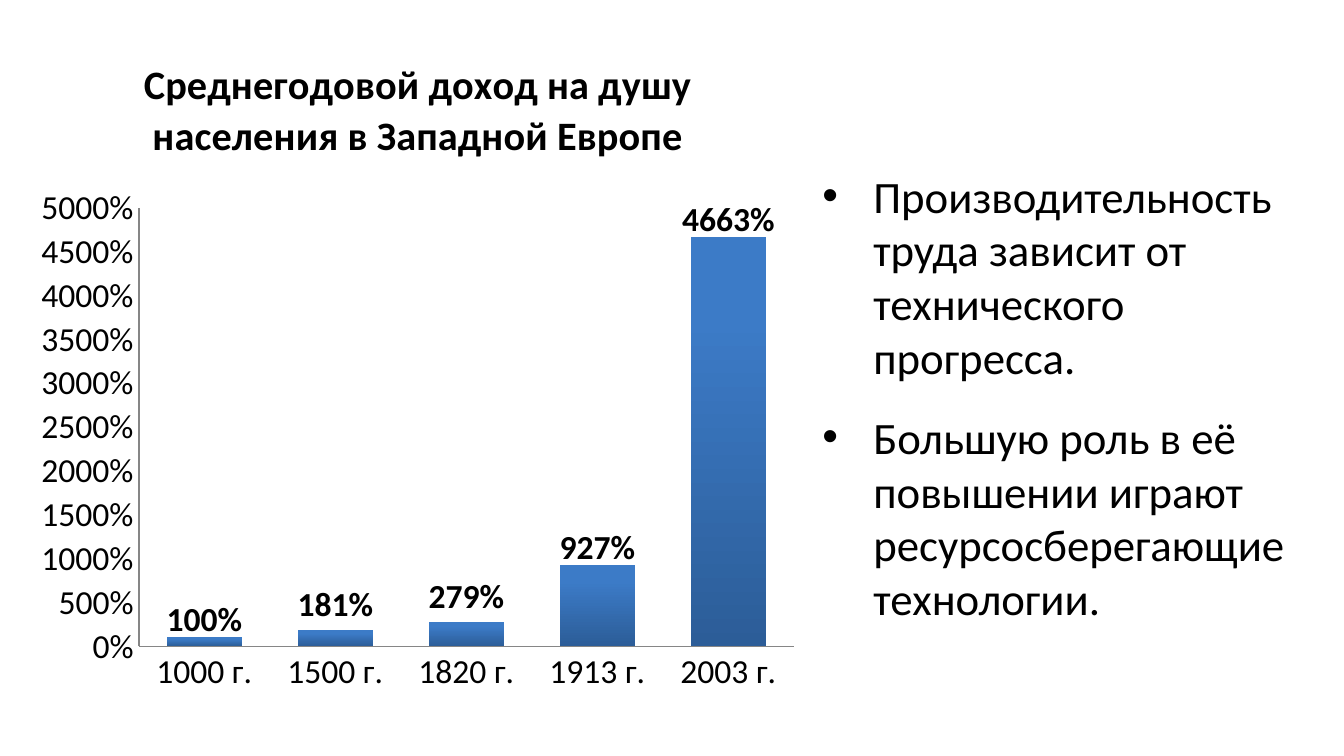
import lxml.etree
import pptx
import pptx.chart.data
import pptx.dml.color
import pptx.enum.chart
import pptx.enum.text
import pptx.oxml.ns
import pptx.util

SLIDE_WIDTH = pptx.util.Inches(10)
SLIDE_HEIGHT = SLIDE_WIDTH * 9 // 16
FONT = "Calibri"
BLACK = pptx.dml.color.RGBColor(0x00, 0x00, 0x00)
AXIS_GRAY = pptx.dml.color.RGBColor(0x86, 0x86, 0x86)
BAR_DARK = pptx.dml.color.RGBColor(0x2C, 0x5D, 0x98)
BAR_LIGHT = pptx.dml.color.RGBColor(0x3C, 0x7B, 0xC7)

CHART_TITLE = "Среднегодовой доход на душу населения в Западной Европе"
INCOME = {
    "1000 г.": 1,
    "1500 г.": 1.81,
    "1820 г.": 2.79,
    "1913 г.": 9.27,
    "2003 г.": 46.63,
}
LOWERED_LABELS = (0, 3, 4)
CONCLUSIONS = (
    "Производительность труда зависит от технического прогресса.",
    "Большую роль в её повышении играют ресурсосберегающие технологии.",
)


def share(left, top, width, height):
    """Turn shares of the slide into a position and size."""
    return (
        int(SLIDE_WIDTH * left),
        int(SLIDE_HEIGHT * top),
        int(SLIDE_WIDTH * width),
        int(SLIDE_HEIGHT * height),
    )


def style_font(font, size, bold=False):
    font.name = FONT
    font.size = pptx.util.Pt(size)
    font.bold = bold
    font.color.rgb = BLACK


def make_layout(**settings):
    """Build a manual chart layout from shares of the chart's size."""
    layout = lxml.etree.Element(pptx.oxml.ns.qn("c:layout"))
    manual = lxml.etree.SubElement(layout, pptx.oxml.ns.qn("c:manualLayout"))
    for tag, value in settings.items():
        lxml.etree.SubElement(manual, pptx.oxml.ns.qn(f"c:{tag}"), val=str(value))
    return layout


def set_plot_layout(chart):
    plot_area = chart._chartSpace.chart.plotArea
    for old_layout in plot_area.findall(pptx.oxml.ns.qn("c:layout")):
        plot_area.remove(old_layout)
    plot_area.insert(0, make_layout(
        layoutTarget="inner", xMode="edge", yMode="edge",
        x=0.143, y=0.265, w=0.836, h=0.647))


def add_chart_title(chart):
    chart.has_title = True
    title = chart.chart_title
    title.include_in_layout = False
    run = title.text_frame.paragraphs[0].add_run()
    run.text = CHART_TITLE
    style_font(run.font, 21.6, bold=True)
    for old_layout in title._element.findall(pptx.oxml.ns.qn("c:layout")):
        title._element.remove(old_layout)
    title._element.find(pptx.oxml.ns.qn("c:tx")).addnext(
        make_layout(xMode="edge", yMode="edge", x=0.14, y=0.03))


def style_axis(axis):
    axis.has_major_gridlines = False
    axis.major_tick_mark = pptx.enum.chart.XL_TICK_MARK.NONE
    axis.minor_tick_mark = pptx.enum.chart.XL_TICK_MARK.NONE
    axis.format.line.color.rgb = AXIS_GRAY
    axis.format.line.width = pptx.util.Pt(0.75)
    style_font(axis.tick_labels.font, 18)


def fill_bars(series):
    fill = series.format.fill
    fill.gradient()
    fill.gradient_angle = 90
    stops = zip(fill.gradient_stops, (BAR_DARK, BAR_LIGHT), (0, 0.8))
    for stop, color, position in stops:
        stop.color.rgb = color
        stop.position = position


def label_bars(series):
    outside = pptx.enum.chart.XL_LABEL_POSITION.OUTSIDE_END
    labels = series.data_labels
    labels.show_value = True
    labels.number_format = "0%"
    labels.number_format_is_linked = False
    labels.position = outside
    style_font(labels.font, 18, bold=True)
    for index in LOWERED_LABELS:
        label = series.points[index].data_label
        label.position = outside
        style_font(label.font, 18, bold=True)
    for label_index in series._element.xpath(".//c:dLbl/c:idx"):
        label_index.addnext(make_layout(x=0, y=0.012))


def add_income_chart(slide):
    data = pptx.chart.data.CategoryChartData(number_format="0%")
    data.categories = list(INCOME)
    data.add_series("Series 1", list(INCOME.values()))
    chart = slide.shapes.add_chart(
        pptx.enum.chart.XL_CHART_TYPE.COLUMN_CLUSTERED,
        *share(0.02, 0.037, 0.583, 0.897), data).chart
    style_font(chart.font, 18)
    chart.has_legend = False
    add_chart_title(chart)
    set_plot_layout(chart)
    style_axis(chart.category_axis)
    style_axis(chart.value_axis)
    chart.value_axis.minimum_scale = 0
    chart.value_axis.maximum_scale = 50
    chart.value_axis.major_unit = 5
    chart.value_axis.tick_labels.number_format = "0%"
    chart.value_axis.tick_labels.number_format_is_linked = False

    bars = chart.plots[0]
    bars.gap_width = 75
    bars.overlap = 40
    bars.vary_by_categories = False
    fill_bars(bars.series[0])
    label_bars(bars.series[0])


def add_bullet(paragraph, text):
    properties = paragraph._p.get_or_add_pPr()
    indent = pptx.util.Inches(0.38)
    properties.set("marL", str(indent))
    properties.set("indent", str(-indent))
    lxml.etree.SubElement(properties, pptx.oxml.ns.qn("a:buFont"), typeface="Arial")
    lxml.etree.SubElement(properties, pptx.oxml.ns.qn("a:buChar"), char="•")
    run = paragraph.add_run()
    run.text = text
    style_font(run.font, 24)


def add_conclusions(slide):
    frame = slide.shapes.add_textbox(*share(0.602, 0.214, 0.366, 0.628)).text_frame
    frame.word_wrap = True
    frame.auto_size = pptx.enum.text.MSO_AUTO_SIZE.SHAPE_TO_FIT_TEXT
    for number, text in enumerate(CONCLUSIONS):
        paragraph = frame.add_paragraph() if number else frame.paragraphs[0]
        if number:
            paragraph.space_before = pptx.util.Pt(14)
        add_bullet(paragraph, text)


def main():
    presentation = pptx.Presentation()
    presentation.slide_width = SLIDE_WIDTH
    presentation.slide_height = SLIDE_HEIGHT
    slide = presentation.slides.add_slide(presentation.slide_layouts[6])
    add_income_chart(slide)
    add_conclusions(slide)
    presentation.save("out.pptx")


if __name__ == "__main__":
    main()
